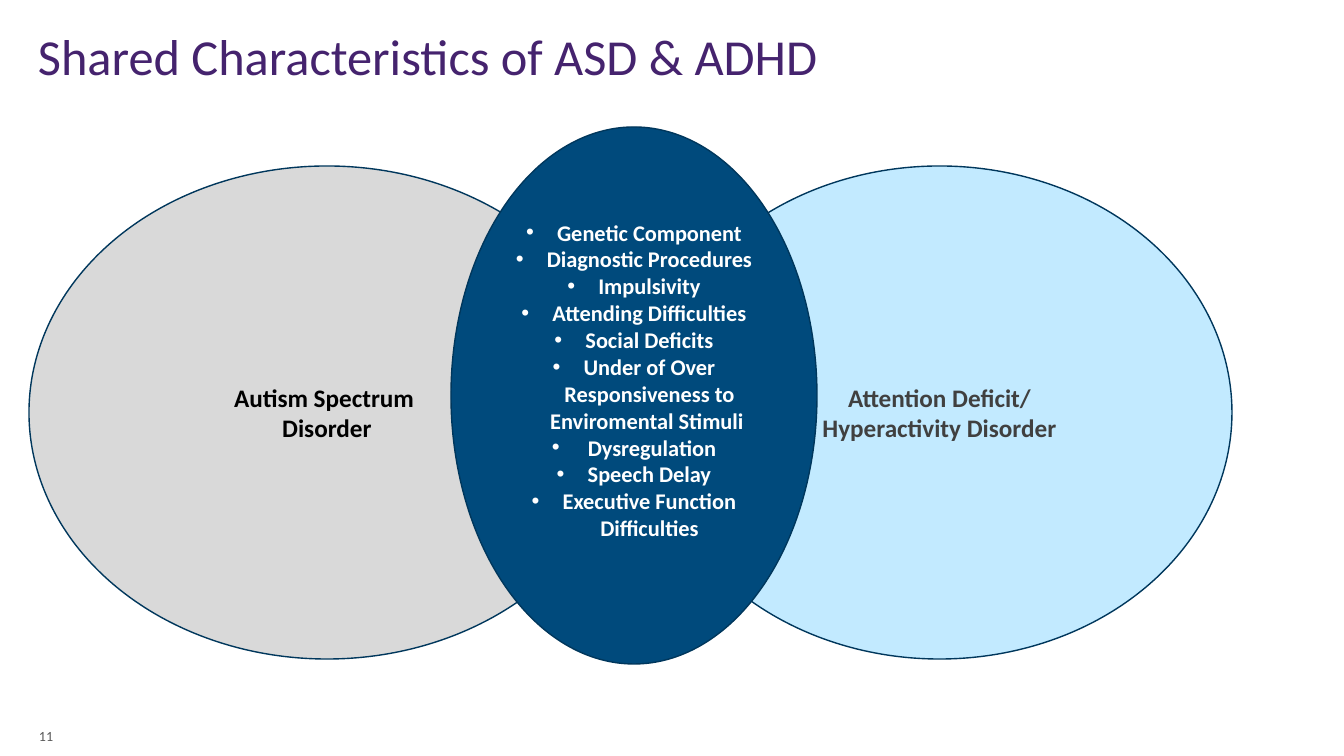
from lxml.etree import SubElement
from pptx import Presentation
from pptx.dml.color import RGBColor
from pptx.enum.shapes import MSO_SHAPE
from pptx.enum.text import MSO_ANCHOR as Anchor, PP_ALIGN as Align
from pptx.oxml.ns import qn
from pptx.util import Emu, Pt

SCALE = 914400 / 100.8


def px(length):
    return Emu(round(length * SCALE))


def color(value):
    return RGBColor.from_string(value)


deck = Presentation()
deck.slide_width, deck.slide_height = px(1344), px(756)
page = deck.slides.add_slide(deck.slide_layouts[6])

labels = [
    ((28, 21, 828, 77), "Shared Characteristics of ASD & ADHD", 36, "45236E", Anchor.MIDDLE, 0.9),
    ((29, 709, 59, 40), "11", 10, "595959", Anchor.BOTTOM, 1.0),
]
for place, words, size, ink, anchor, spacing in labels:
    box = page.shapes.add_textbox(*map(px, place))
    frame = box.text_frame
    frame.word_wrap = True
    frame.vertical_anchor = anchor
    para = frame.paragraphs[0]
    para.line_spacing = spacing
    span = para.add_run()
    span.text = words
    for name, value in {"name": "Calibri", "size": Pt(size)}.items():
        setattr(span.font, name, value)
    span.font.color.rgb = color(ink)

shared = [
    "Genetic Component",
    "Diagnostic Procedures",
    "Impulsivity",
    "Attending Difficulties",
    "Social Deficits",
    "Under of Over Responsiveness to Enviromental Stimuli ",
    " Dysregulation",
    "Speech Delay",
    "Executive Function Difficulties",
]
ellipses = [
    ((29, 166, 596, 493), "D9D9D9", "000000", 18, ["Autism Spectrum ", "Disorder"], False),
    ((647, 166, 585, 493), "C2EAFF", "404040", 18, ["Attention Deficit/", "Hyperactivity Disorder"], False),
    ((451, 127, 366, 537), "004A7C", "FFFFFF", 16, shared, True),
]
for place, fill, ink, size, lines, bulleted in ellipses:
    ellipse = page.shapes.add_shape(MSO_SHAPE.OVAL, *map(px, place))
    ellipse.shadow.inherit = False
    ellipse.fill.solid()
    ellipse.fill.fore_color.rgb = color(fill)
    ellipse.line.color.rgb = color("00375C")
    ellipse.line.width = Pt(1)
    frame = ellipse.text_frame
    frame.word_wrap = True
    frame.vertical_anchor = Anchor.MIDDLE
    if bulleted:
        frame.margin_bottom = px(36)
    for index, words in enumerate(lines):
        para = frame.add_paragraph() if index else frame.paragraphs[0]
        para.alignment = Align.CENTER
        if bulleted:
            layout = para._p.get_or_add_pPr()
            layout.set("marL", str(px(31)))
            layout.set("indent", str(px(-31)))
            SubElement(layout, qn("a:buFont"), typeface="Arial")
            SubElement(layout, qn("a:buChar"), char="•")
        span = para.add_run()
        span.text = words
        for name, value in {"name": "Calibri", "size": Pt(size), "bold": True}.items():
            setattr(span.font, name, value)
        span.font.color.rgb = color(ink)

deck.save("out.pptx")
